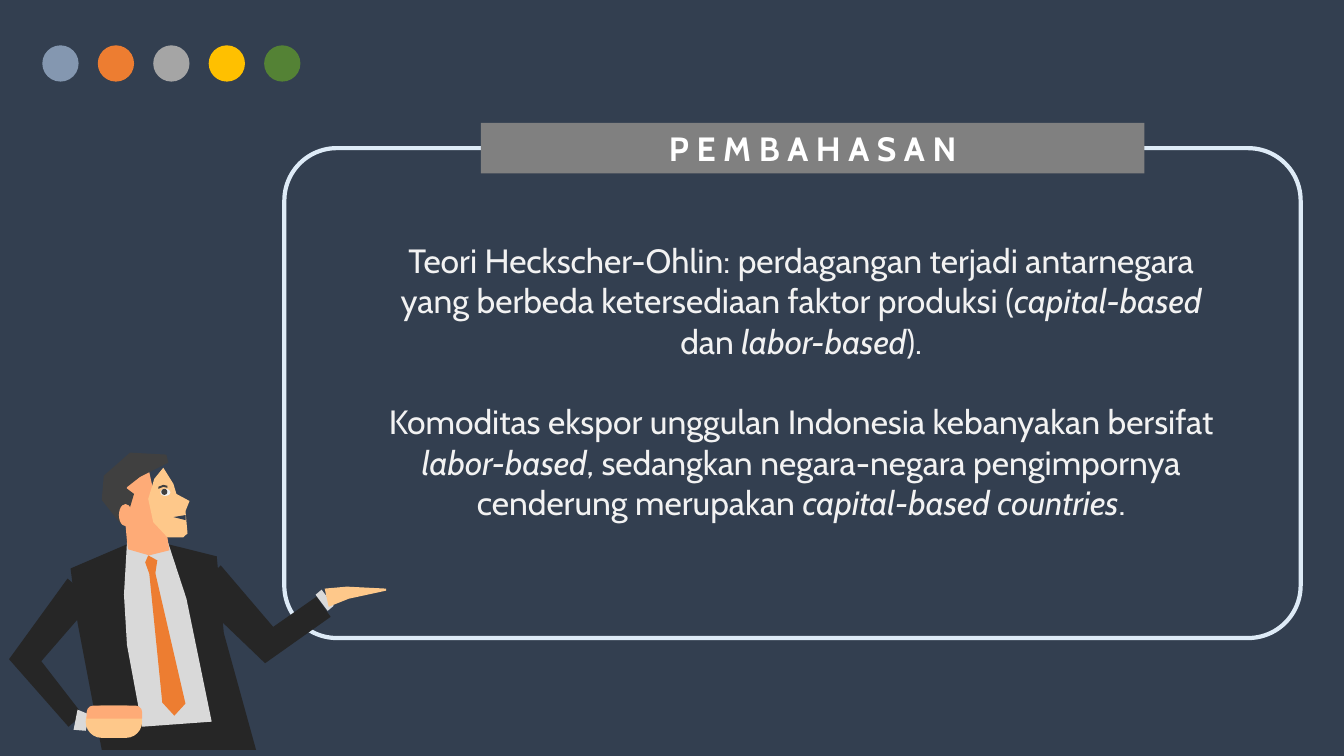
from math import hypot

from pptx import Presentation
from pptx.dml.color import RGBColor
from pptx.enum.shapes import MSO_SHAPE
from pptx.enum.text import MSO_ANCHOR, PP_ALIGN
from pptx.util import Inches, Pt

FONT = "Cabin"
NAVY = RGBColor(0x33, 0x3F, 0x50)
STEEL = RGBColor(0x84, 0x97, 0xB0)
ORANGE = RGBColor(0xED, 0x7D, 0x31)
SILVER = RGBColor(0xA5, 0xA5, 0xA5)
GOLD = RGBColor(0xFF, 0xC0, 0x00)
GREEN = RGBColor(0x54, 0x82, 0x35)
ICE = RGBColor(0xDE, 0xEB, 0xF7)
GREY = RGBColor(0x80, 0x80, 0x80)
WHITE = RGBColor(0xFF, 0xFF, 0xFF)
OFF_WHITE = RGBColor(0xF2, 0xF2, 0xF2)
SKIN = RGBColor(0xFE, 0xC8, 0x8A)
SKIN_SHADE = RGBColor(0xFE, 0xAB, 0x77)
CHARCOAL = RGBColor(0x40, 0x40, 0x40)
JACKET = RGBColor(0x26, 0x26, 0x26)
SHIRT = RGBColor(0xD9, 0xD9, 0xD9)

DOT_COLORS = [STEEL, ORANGE, SILVER, GOLD, GREEN]

# Each paragraph is a list of (text, italic) spans.
DISCUSSION = [
    [("Teori Heckscher-Ohlin: perdagangan terjadi antarnegara yang berbeda "
      "ketersediaan faktor produksi (", False),
     ("capital-based ", True), ("dan ", False), ("labor-based", True), (").", False)],
    [("Komoditas ekspor unggulan Indonesia kebanyakan bersifat ", False),
     ("labor-based", True),
     (", sedangkan negara-negara pengimpornya cenderung merupakan ", False),
     ("capital-based countries", True), (".", False)],
]


def paint(shape, color):
    """Give a shape a flat fill without line or shadow."""
    shape.shadow.inherit = False
    shape.fill.solid()
    shape.fill.fore_color.rgb = color
    shape.line.fill.background()


def style_span(span, color, bold=False, italic=False):
    span.font.name = FONT
    span.font.size = Pt(24)
    span.font.color.rgb = color
    span.font.bold = bold
    span.font.italic = italic


def add_preset(owner, kind, color, left, top, width, height):
    """Add a flat preset shape, measured in inches, to a slide or group."""
    shape = owner.shapes.add_shape(
        kind, Inches(left), Inches(top), Inches(width), Inches(height))
    paint(shape, color)
    return shape


def add_polygon(owner, color, corners):
    """Add a flat polygon; corners are in hundredths of an inch."""
    builder = owner.shapes.build_freeform(*corners[0], scale=Inches(0.01))
    builder.add_line_segments(corners[1:], close=True)
    paint(builder.convert_to_shape(), color)


def add_limb(owner, color, joints):
    """Add a band that follows joints of (x, y, half width), in hundredths of an inch.

    Its two edges lie at right angles to the line between each joint's neighbours.
    """
    near_edge, far_edge = [], []
    for index, (x, y, half_width) in enumerate(joints):
        before = joints[max(index - 1, 0)]
        after = joints[min(index + 1, len(joints) - 1)]
        run, rise = after[0] - before[0], after[1] - before[1]
        reach = half_width / hypot(run, rise)
        near_edge.append((x - rise * reach, y + run * reach))
        far_edge.append((x + rise * reach, y - run * reach))
    add_polygon(owner, color, near_edge + far_edge[::-1])


def add_dots(page):
    dots = page.shapes.add_group_shape()
    for index, color in enumerate(DOT_COLORS):
        add_preset(dots, MSO_SHAPE.OVAL, color, 0.42 + 0.55 * index, 0.45, 0.36, 0.36)


def add_frame(page):
    frame = page.shapes.add_shape(
        MSO_SHAPE.ROUNDED_RECTANGLE, Inches(2.82), Inches(1.47),
        Inches(10.08), Inches(4.86))
    frame.adjustments[0] = 0.107
    frame.shadow.inherit = False
    frame.fill.background()
    frame.line.color.rgb = ICE
    frame.line.width = Pt(3)


def add_title(page, text):
    banner = add_preset(page, MSO_SHAPE.RECTANGLE, GREY, 4.77, 1.22, 6.58, 0.5)
    banner.text_frame.text = text
    banner.text_frame.vertical_anchor = MSO_ANCHOR.MIDDLE
    para = banner.text_frame.paragraphs[0]
    para.alignment = PP_ALIGN.CENTER
    style_span(para.runs[0], WHITE, bold=True)


def add_suit(presenter):
    torso = [(70, 564), (126, 540), (167, 540), (215, 552),
             (222, 628), (254, 744), (101, 744), (77, 618)]
    shirt = [(126, 538), (167, 539), (185, 594), (210, 716),
             (141, 721), (126, 640), (123, 590)]
    left_arm = [(80, 585, 17), (25, 655, 16), (75, 715, 9)]
    right_arm = [(205, 575, 20), (267, 640, 18), (321, 602, 12)]
    add_polygon(presenter, JACKET, torso)
    add_limb(presenter, JACKET, left_arm)
    add_limb(presenter, JACKET, right_arm)
    add_polygon(presenter, SHIRT, shirt)


def add_head(presenter):
    neck_and_cheek = [(124, 515), (126, 480), (148, 468), (155, 500), (166, 533),
                      (168, 546), (148, 551), (127, 545), (126, 537)]
    face = [(162, 464), (172, 480), (175, 490), (188, 497), (184, 507), (186, 529),
            (182, 533), (166, 533), (152, 518), (147, 495), (153, 475)]
    mouth = [(172, 513), (184, 511), (184, 516)]
    hair = [(122, 520, 2), (117, 493, 16), (114, 478, 13), (134, 461, 13), (166, 455, 4)]
    eyebrow = [(157, 484, 1), (162, 482, 1), (166, 483, 1)]
    add_polygon(presenter, SKIN_SHADE, neck_and_cheek)
    add_polygon(presenter, SKIN, face)
    add_polygon(presenter, NAVY, mouth)
    add_limb(presenter, CHARCOAL, hair)
    add_limb(presenter, CHARCOAL, eyebrow)
    add_preset(presenter, MSO_SHAPE.OVAL, SKIN_SHADE, 1.18, 5, 0.13, 0.22)
    add_preset(presenter, MSO_SHAPE.OVAL, OFF_WHITE, 1.59, 4.85, 0.1, 0.07)
    add_preset(presenter, MSO_SHAPE.OVAL, CHARCOAL, 1.6, 4.85, 0.06, 0.06)


def add_tie(presenter):
    knot = [(147, 551), (156, 556), (154, 569), (148, 569), (144, 558)]
    blade = [(148, 568), (154, 568), (184, 698), (173, 710), (161, 697)]
    for corners in (knot, blade):
        add_polygon(presenter, ORANGE, corners)


def add_hands(presenter):
    right_cuff = [(319, 598, 10), (325, 593, 10)]
    open_hand = [(324, 593, 9), (345, 588, 6), (383, 585, 1)]
    left_cuff = [(75, 714, 10), (87, 717, 8)]
    add_limb(presenter, SHIRT, right_cuff)
    add_limb(presenter, SKIN, open_hand)
    add_limb(presenter, SHIRT, left_cuff)
    fist = add_preset(presenter, MSO_SHAPE.ROUNDED_RECTANGLE, SKIN, 0.85, 7, 0.56, 0.32)
    knuckles = add_preset(
        presenter, MSO_SHAPE.ROUND_2_SAME_RECTANGLE, SKIN_SHADE, 0.86, 7, 0.55, 0.13)
    for part in (fist, knuckles):
        part.adjustments[0] = 0.5


def add_presenter(page):
    presenter = page.shapes.add_group_shape()
    for add_part in (add_suit, add_head, add_tie, add_hands):
        add_part(presenter)


def add_discussion(page):
    box = page.shapes.add_textbox(Inches(3.09), Inches(2.33), Inches(9.21), Inches(3.33))
    frame = box.text_frame
    frame.word_wrap = True
    frame.margin_left = Inches(0.6)
    frame.margin_right = Inches(0.1)
    for index, spans in enumerate(DISCUSSION):
        para = frame.add_paragraph() if index else frame.paragraphs[0]
        para.alignment = PP_ALIGN.CENTER
        para.space_before = Pt(29 if index else 0)
        for text, italic in spans:
            span = para.add_run()
            span.text = text
            style_span(span, OFF_WHITE, italic=italic)


def main():
    deck = Presentation()
    deck.slide_width = Inches(13.33)
    deck.slide_height = Inches(7.5)
    page = deck.slides.add_slide(deck.slide_layouts[6])
    page.background.fill.solid()
    page.background.fill.fore_color.rgb = NAVY
    add_dots(page)
    add_frame(page)
    add_title(page, "P E M B A H A S A N")
    add_presenter(page)
    add_discussion(page)
    deck.save("out.pptx")


if __name__ == "__main__":
    main()
